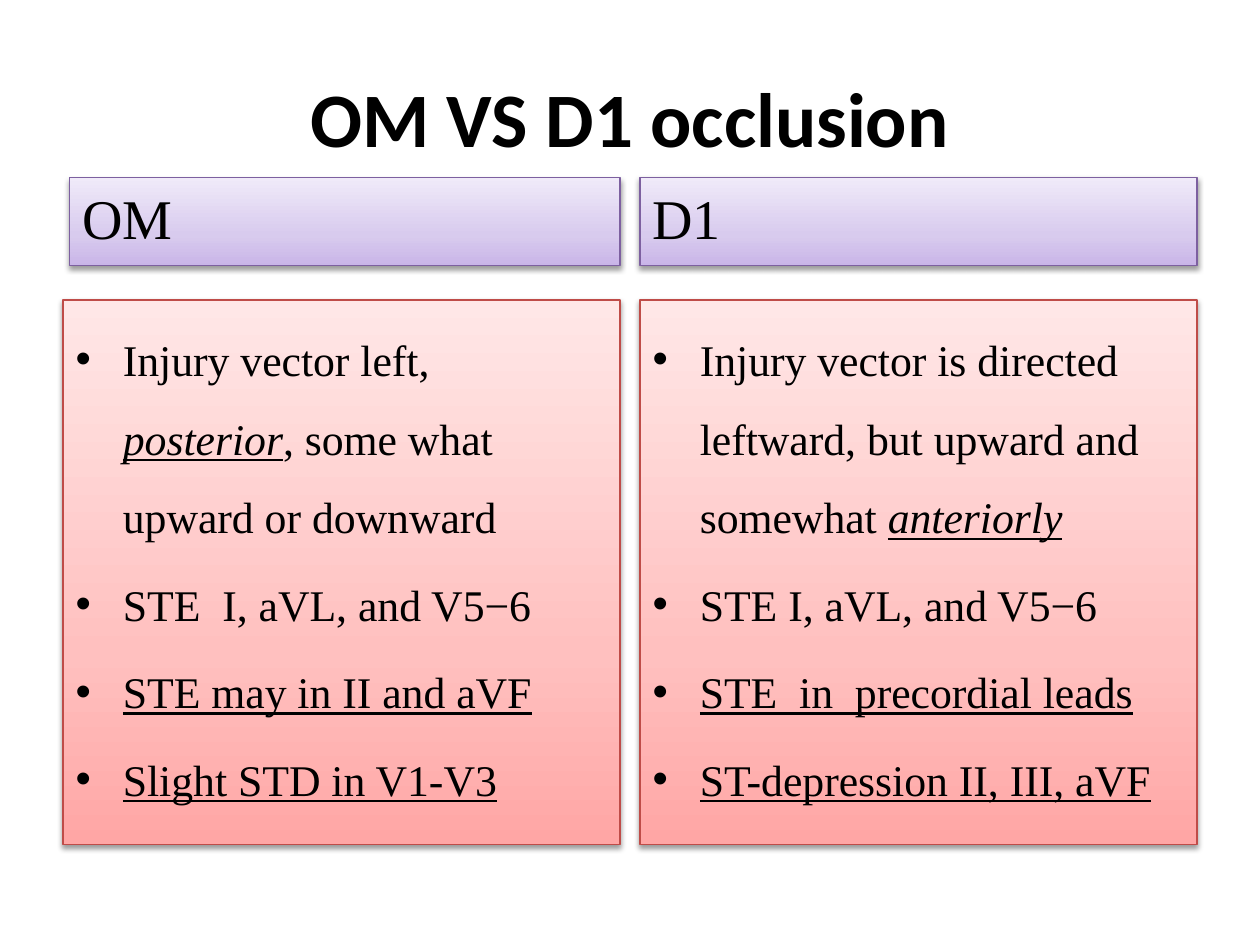
from lxml import etree
from pptx import Presentation
from pptx import util as u
from pptx.dml.color import RGBColor
from pptx.enum import text
from pptx.oxml import parse_xml
from pptx.oxml.ns import nsdecls, qn

COLORS = {
    "ink": "000000",
    "purple_line": "7D60A0",
    "red_line": "BF4C48",
}
GRADIENTS = {
    "purple": ((0, "C9B5E8"), (35, "D8CBEE"), (100, "F0EAF9")),
    "red": ((0, "FFA6A5"), (35, "FFC0BF"), (100, "FFE7E7")),
}
PLAIN, UNDER, EMPH = (False, False), (False, True), (True, True)
COLUMNS = [
    ("OM", 1.4, 11.1, 1.27, [
        [("Injury vector left, ", PLAIN), ("posterior", EMPH),
         (", some what upward or downward", PLAIN)],
        [("STE  I, aVL, and V5−6", PLAIN)],
        [("STE may in II and aVF", UNDER)],
        [("Slight STD in V1-V3", UNDER)],
    ]),
    ("D1", 12.9, 11.23, 12.9, [
        [("Injury vector is directed leftward, but upward and somewhat ", PLAIN),
         ("anteriorly", EMPH)],
        [("STE I, aVL, and V5−6", PLAIN)],
        [("STE  in  precordial leads", UNDER)],
        [("ST-depression II, III, aVF", UNDER)],
    ]),
]


class Deck:
    """Hold the slide and its style, and fill its placeholders."""

    def __init__(self, prs):
        self.s = prs.slides.add_slide(prs.slide_layouts[4])
        self.heading_font = "Calibri"
        self.body_font = "Times New Roman"

    def place(self, idx, x, y, w, h, anchor):
        sp = self.s.placeholders[idx]
        sp.left, sp.top, sp.width, sp.height = map(u.Cm, (x, y, w, h))
        tf = sp.text_frame
        tf.word_wrap = True
        tf.auto_size = text.MSO_AUTO_SIZE.NONE
        tf.vertical_anchor = anchor
        return sp

    def font(self, p, name, size, bold=False):
        p.font.name, p.font.size, p.font.bold = name, u.Pt(size), bold
        p.font.color.rgb = RGBColor.from_string(COLORS["ink"])

    def panel(self, idx, box, hue):
        sp = self.place(idx, *box, text.MSO_ANCHOR.TOP)
        sp.fill.gradient()
        sp.fill.gradient_angle = 90
        stops = sp._element.spPr.find(".//" + qn("a:gsLst"))
        for stop in list(stops):
            stops.remove(stop)
        for pos, color in GRADIENTS[hue]:
            gs = etree.SubElement(stops, qn("a:gs"), pos=str(pos * 1000))
            etree.SubElement(gs, qn("a:srgbClr"), val=color)
        sp.line.color.rgb = RGBColor.from_string(COLORS[hue + "_line"])
        sp.line.width = u.Pt(0.75)
        sp._element.spPr.append(parse_xml(
            f'<a:effectLst {nsdecls("a")}><a:outerShdw blurRad="{u.Pt(3.1)}" '
            f'dist="{u.Pt(1.6)}" dir="5400000" rotWithShape="0">'
            '<a:srgbClr val="000000"><a:alpha val="38000"/></a:srgbClr>'
            '</a:outerShdw></a:effectLst>'))
        return sp.text_frame

    def title(self, words):
        sp = self.place(0, 1.27, 0.76, 22.86, 3.18, text.MSO_ANCHOR.MIDDLE)
        p = sp.text_frame.paragraphs[0]
        p.text, p.alignment = words, text.PP_ALIGN.CENTER
        self.font(p, self.heading_font, 44, True)

    def header(self, idx, words, x, w):
        p = self.panel(idx, (x, 3.58, w, 1.78), "purple").paragraphs[0]
        p.text = words
        self.font(p, self.body_font, 32)

    def bullets(self, idx, items, x):
        tf = self.panel(idx, (x, 6.05, 11.23, 10.97), "red")
        for i, runs in enumerate(items):
            p = tf.add_paragraph() if i else tf.paragraphs[0]
            p.line_spacing = 1.5
            self.font(p, self.body_font, 25)
            for words, (italic, underline) in runs:
                r = p.add_run()
                r.text = words
                r.font.italic, r.font.underline = italic, underline


def main():
    prs = Presentation()
    prs.slide_width, prs.slide_height = u.Cm(25.4), u.Cm(19.05)
    deck = Deck(prs)
    deck.title("OM VS D1 occlusion")
    for i, (name, head_x, head_w, list_x, items) in enumerate(COLUMNS):
        deck.header(2 * i + 1, name, head_x, head_w)
        deck.bullets(2 * i + 2, items, list_x)
    prs.save("out.pptx")


if __name__ == "__main__":
    main()
